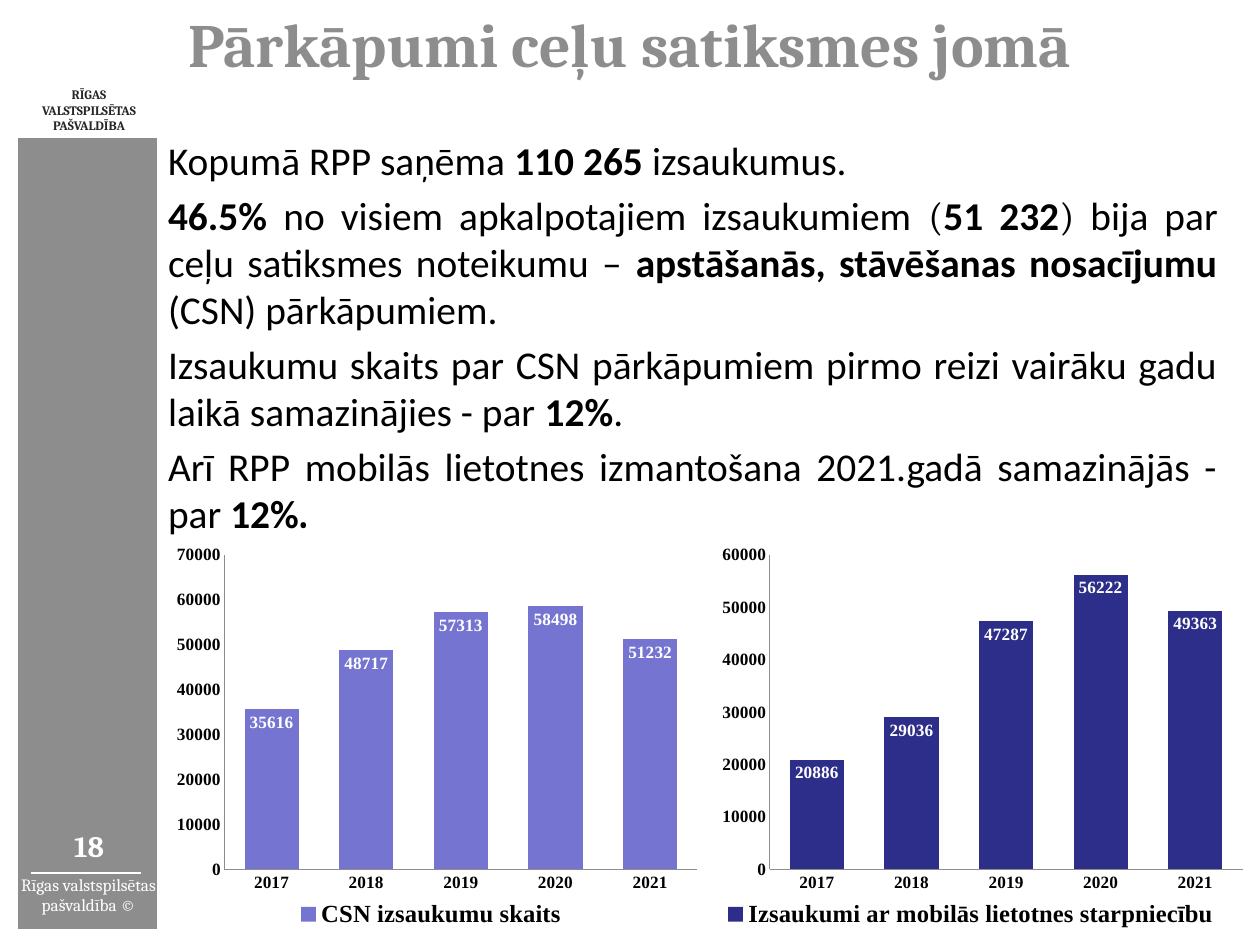
from lxml import etree
from pptx import Presentation
from pptx import util as u
from pptx.chart.data import CategoryChartData
from pptx.dml.color import RGBColor
from pptx.enum import chart as charts, shapes, text
from pptx.oxml import parse_xml
from pptx.oxml.ns import nsdecls, qn

PX = 10320  # EMU per px
SERIF, SANS, CHART_FONT = "Cambria", "Calibri", "Times New Roman"
GREY, WHITE, BLACK, INK = "8C8D8C", "FFFFFF", "000000", "262626"
CENTER, JUSTIFY = text.PP_ALIGN.CENTER, text.PP_ALIGN.JUSTIFY
TOP, MIDDLE = text.MSO_ANCHOR.TOP, text.MSO_ANCHOR.MIDDLE


def rgb(value):
    return RGBColor.from_string(value)


def style(font, size, color=None, bold=None, name=None):
    font.size = u.Pt(size)
    font.bold = bold
    if color:
        font.color.rgb = rgb(color)
    if name:
        font.name = name


class Deck:
    def __init__(self, width, height):
        self.prs = Presentation()
        self.prs.slide_width, self.prs.slide_height = width * PX, height * PX
        self.slide = self.prs.slides.add_slide(self.prs.slide_layouts[1])

    def frame(self, shape, inset=0, anchor=MIDDLE, wrap=True):
        frame = shape.text_frame
        frame.auto_size = text.MSO_AUTO_SIZE.NONE
        frame.word_wrap, frame.vertical_anchor = wrap, anchor
        frame.margin_left = frame.margin_right = inset * PX
        frame.margin_top = frame.margin_bottom = inset * PX
        return frame

    def caption(self, shape, words, size, color, bold=False, **options):
        line = self.frame(shape, **options).paragraphs[0]
        line.add_run().text = words
        line.alignment = CENTER
        style(line.font, size, color, bold, SERIF)

    def place(self, shape, box):
        shape.left, shape.top, shape.width, shape.height = (n * PX for n in box)
        return shape

    def rect(self, box, fill):
        shape = self.slide.shapes.add_shape(
            shapes.MSO_SHAPE.RECTANGLE, *(n * PX for n in box))
        shape.shadow.inherit = False
        shape.fill.solid()
        shape.fill.fore_color.rgb = rgb(fill)
        shape.line.fill.background()
        return shape

    def label(self, box, words, size, color, **options):
        shape = self.slide.shapes.add_textbox(*(n * PX for n in box))
        self.caption(shape, words, size, color, **options)

    def rule(self, x1, x2, y, color):
        line = self.slide.shapes.add_connector(
            shapes.MSO_CONNECTOR.STRAIGHT, x1 * PX, y * PX, x2 * PX, y * PX)
        line.line.color.rgb = rgb(color)
        line.line.width = u.Pt(1)
        etree.SubElement(line.element.spPr, qn("a:effectLst"))

    def title(self, box, words):
        shape = self.place(self.slide.shapes.title, box)
        self.caption(shape, words, 50, GREY, bold=True, inset=5)

    def body(self, box, paragraphs):
        shape = self.place(self.slide.placeholders[1], box)
        frame = self.frame(shape, inset=5, anchor=TOP)
        for index, runs in enumerate(paragraphs):
            para = frame.add_paragraph() if index else frame.paragraphs[0]
            props = para._p.get_or_add_pPr()
            props.set("marL", "0")
            props.set("indent", "0")
            etree.SubElement(props, qn("a:buNone"))
            para.alignment = JUSTIFY
            para.space_before = u.Pt(6 if index else 0)
            style(para.font, 32, BLACK)
            for words, marks in runs:
                run = para.add_run()
                run.text = words
                run.font.bold = "b" in marks
                run.font.name = SERIF if "s" in marks else SANS

    def columns(self, box, name, years, values, color, plot_area):
        data = CategoryChartData()
        data.categories = years
        data.add_series(name, values)
        chart = self.slide.shapes.add_chart(
            charts.XL_CHART_TYPE.COLUMN_CLUSTERED, *(n * PX for n in box), data).chart
        chart.has_title = False
        style(chart.font, 18, BLACK, name=SERIF)
        # Axes
        for axis in (chart.category_axis, chart.value_axis):
            axis.has_major_gridlines = False
            axis.major_tick_mark = axis.minor_tick_mark = charts.XL_TICK_MARK.NONE
            axis.format.line.color.rgb = rgb(GREY)
            style(axis.tick_labels.font, 14, BLACK, True, CHART_FONT)
        chart.value_axis.minimum_scale = 0
        chart.value_axis.major_unit = 10000
        # Legend
        chart.has_legend = True
        chart.legend.position = charts.XL_LEGEND_POSITION.BOTTOM
        chart.legend.include_in_layout = False
        style(chart.legend.font, 20, BLACK, True, CHART_FONT)
        # Columns and their values
        plot = chart.plots[0]
        plot.gap_width, plot.vary_by_categories = 75, False
        fill = plot.series[0].format.fill
        fill.solid()
        fill.fore_color.rgb = rgb(color)
        plot.has_data_labels = True
        labels = plot.data_labels
        labels.show_value = True
        labels.position = charts.XL_LABEL_POSITION.INSIDE_END
        style(labels.font, 14, WHITE, True, CHART_FONT)
        # Fixed inner plot area
        area = chart.element.find(".//" + qn("c:plotArea"))
        for old in area.findall(qn("c:layout")):
            area.remove(old)
        modes = '<c:xMode val="edge"/><c:yMode val="edge"/>'
        sizes = "".join(f'<c:{k} val="{v}"/>' for k, v in zip("xywh", plot_area))
        area.insert(0, parse_xml(
            f'<c:layout {nsdecls("c")}><c:manualLayout><c:layoutTarget val="inner"/>'
            f"{modes}{sizes}</c:manualLayout></c:layout>"))


def main():
    deck = Deck(1260, 945)

    # Side band
    deck.rect((18, 133, 139, 796), GREY)
    deck.label((19, 875, 139, 39), "Rīgas valstspilsētas pašvaldība ©", 14, WHITE)
    deck.rule(31, 141, 873, WHITE)
    municipality = deck.rect((16, 82, 146, 56), WHITE)
    deck.caption(municipality, "RĪGAS VALSTSPILSĒTAS PAŠVALDĪBA", 10.5, INK,
                 bold=True, inset=9)
    deck.label((66, 823, 46, 46), "18", 24, WHITE, bold=True, wrap=False)

    # Title and findings; marks: b = bold, s = serif
    deck.title((0, -2, 1260, 90), "Pārkāpumi ceļu satiksmes jomā")
    deck.body((163, 131, 1060, 418), [
        [("Kopumā RPP saņēma ", ""), ("110 265 ", "b"), ("izsaukumus.", "")],
        [("46.5% ", "b"), ("no visiem apkalpotajiem izsaukumiem ", ""), ("(", "s"),
         ("51 232", "b"), (")", "s"), (" bija par ceļu satiksmes noteikumu – ", ""),
         ("apstāšanās, stāvēšanas nosacījumu ", "b"), ("(CSN) pārkāpumiem.", "")],
        [("Izsaukumu skaits par CSN pārkāpumiem pirmo reizi vairāku gadu laikā "
          "samazinājies - par ", ""), ("12%", "b"), (".", "")],
        [("Arī RPP mobilās lietotnes izmantošana 2021.gadā samazinājās - par ", ""),
         ("12%", "b"), (".", "bs")],
    ])

    # Charts
    years = [str(year) for year in range(2017, 2022)]
    deck.columns((699, 535, 544, 398), "Izsaukumi ar mobilās lietotnes starpniecību",
                 years, (20886, 29036, 47287, 56222, 49363), "2D2D8A",
                 (0.13, 0.05, 0.87, 0.79))
    deck.columns((159, 535, 544, 398), "CSN izsaukumu skaits",
                 years, (35616, 48717, 57313, 58498, 51232), "7575D1",
                 (0.12, 0.05, 0.87, 0.79))

    deck.prs.save("out.pptx")


if __name__ == "__main__":
    main()
